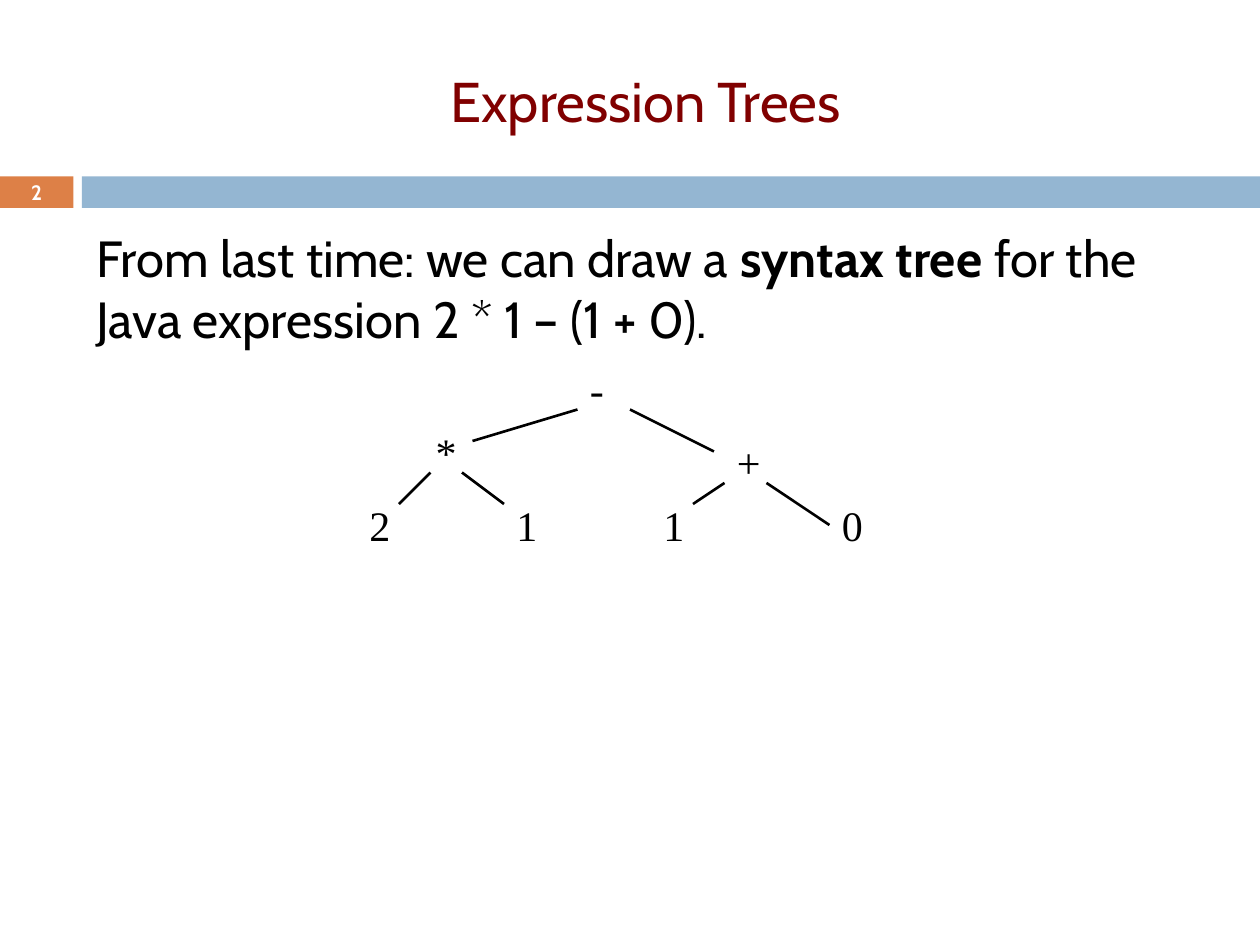
import dataclasses

import pptx
import pptx.dml.color
import pptx.enum.shapes
import pptx.enum.text
import pptx.oxml.xmlchemy
import pptx.util

RGB = pptx.dml.color.RGBColor.from_string
ALIGN = pptx.enum.text.PP_ALIGN
ANCHOR = pptx.enum.text.MSO_ANCHOR
AUTO_SIZE = pptx.enum.text.MSO_AUTO_SIZE


@dataclasses.dataclass(frozen=True)
class Theme:
    title: str = "800000"
    ink: str = "000000"
    paper: str = "FFFFFF"
    accent: str = "DD8047"
    band: str = "94B6D2"
    font: str = "Cabin"
    tree_font: str = "Times New Roman"
    title_size: float = 32
    body_size: float = 29
    node_size: float = 24
    number_size: float = 11.9
    edge_width: float = 1.5


class Deck:
    """Places elements on a grid of 120 columns and 90 rows."""

    COLUMNS, ROWS = 120, 90

    def __init__(self, prs, theme):
        self.prs, self.theme = prs, theme
        self.slide = prs.slides.add_slide(prs.slide_layouts[1])

    def point(self, column, row):
        return (round(self.prs.slide_width * column / self.COLUMNS),
                round(self.prs.slide_height * row / self.ROWS))

    def box(self, column, row, columns, rows):
        return self.point(column, row) + self.point(columns, rows)

    def add_empty(self, parent, tag):
        parent.append(pptx.oxml.xmlchemy.OxmlElement(tag))

    def style(self, p, font, size, color, align=ALIGN.LEFT):
        p.alignment = align
        for r in p.runs:
            r.font.name, r.font.size = font, pptx.util.Pt(size)
            r.font.color.rgb = RGB(color)

    def place(self, sp, cells):
        sp.left, sp.top, sp.width, sp.height = self.box(*cells)
        sp.text_frame.auto_size = AUTO_SIZE.NONE

    def title(self, text, cells):
        sp = self.slide.shapes.title
        self.place(sp, cells)
        tf = sp.text_frame
        tf.text = text
        tf.vertical_anchor = ANCHOR.MIDDLE
        self.style(tf.paragraphs[0], self.theme.font, self.theme.title_size,
                   self.theme.title, ALIGN.CENTER)

    def body(self, lines, cells):
        """Writes lines of (text, bold) runs as one paragraph without a bullet."""
        sp = self.slide.placeholders[1]
        self.place(sp, cells)
        p = sp.text_frame.paragraphs[0]
        for i, line in enumerate(lines):
            if i:
                p.add_line_break()
            for text, bold in line:
                r = p.add_run()
                r.text, r.font.bold = text, bold
        self.style(p, self.theme.font, self.theme.body_size, self.theme.ink)
        p.space_before = pptx.util.Pt(7)
        pPr = p._p.get_or_add_pPr()
        pPr.set("marL", "0")
        pPr.set("indent", "0")
        self.add_empty(pPr, "a:buNone")

    def bar(self, color, cells):
        sp = self.slide.shapes.add_shape(
            pptx.enum.shapes.MSO_SHAPE.RECTANGLE, *self.box(*cells))
        sp.shadow.inherit = False
        sp.fill.solid()
        sp.fill.fore_color.rgb = RGB(color)
        sp.line.fill.background()

    def number(self, text, cells):
        tf = self.slide.shapes.add_textbox(*self.box(*cells)).text_frame
        tf.text = text
        tf.word_wrap = True
        tf.vertical_anchor = ANCHOR.MIDDLE
        tf.margin_top = tf.margin_bottom = 0
        p = tf.paragraphs[0]
        self.style(p, self.theme.font, self.theme.number_size,
                   self.theme.paper, ALIGN.CENTER)
        p.runs[0].font.bold = True

    def node(self, text, column, row, columns):
        tf = self.slide.shapes.add_textbox(
            *self.box(column, row, columns, 6)).text_frame
        tf.text = text
        tf.word_wrap = True
        tf.auto_size = AUTO_SIZE.SHAPE_TO_FIT_TEXT
        self.style(tf.paragraphs[0], self.theme.tree_font,
                   self.theme.node_size, self.theme.ink)

    def edge(self, start, end):
        line = self.slide.shapes.add_connector(
            pptx.enum.shapes.MSO_CONNECTOR.STRAIGHT,
            *self.point(*start), *self.point(*end))
        line.line.color.rgb = RGB(self.theme.ink)
        line.line.width = pptx.util.Pt(self.theme.edge_width)
        self.add_empty(line._element.spPr, "a:effectLst")


def main():
    prs = pptx.Presentation()
    prs.slide_width, prs.slide_height = pptx.util.Inches(10), pptx.util.Inches(7.5)
    theme = Theme()
    deck = Deck(prs, theme)

    deck.bar(theme.accent, (0, 16.8, 7, 3))
    deck.bar(theme.band, (7.8, 16.8, 112.2, 3))
    deck.title("Expression Trees", (8, 3, 107, 13))
    deck.number("2", (0, 16.7, 7, 3.2))
    deck.body([
        [("From last time: we can draw a ", False), ("syntax tree ", True),
         ("for the", False)],
        [("Java expression 2 * 1 – (1 + 0).", False)],
    ], (8, 21, 107, 13))

    nodes = [  # text, column, row, columns
        ("-", 55, 34, 3.7),
        ("*", 40.3, 40, 4.4), ("+", 69, 41, 4.7),
        ("2", 34, 47, 6), ("1", 48, 47, 6),
        ("1", 62, 47, 6), ("0", 79, 47, 4.4),
    ]
    for node in nodes:
        deck.node(*node)

    edges = [  # parent end, child end
        ((55, 39), (45, 42)), ((60, 39), (68, 43)),
        ((41, 45), (38, 48)), ((44, 45), (48, 48)),
        ((69, 46), (66, 48)), ((73, 46), (79, 50)),
    ]
    for edge in edges:
        deck.edge(*edge)

    prs.save("out.pptx")


if __name__ == "__main__":
    main()
